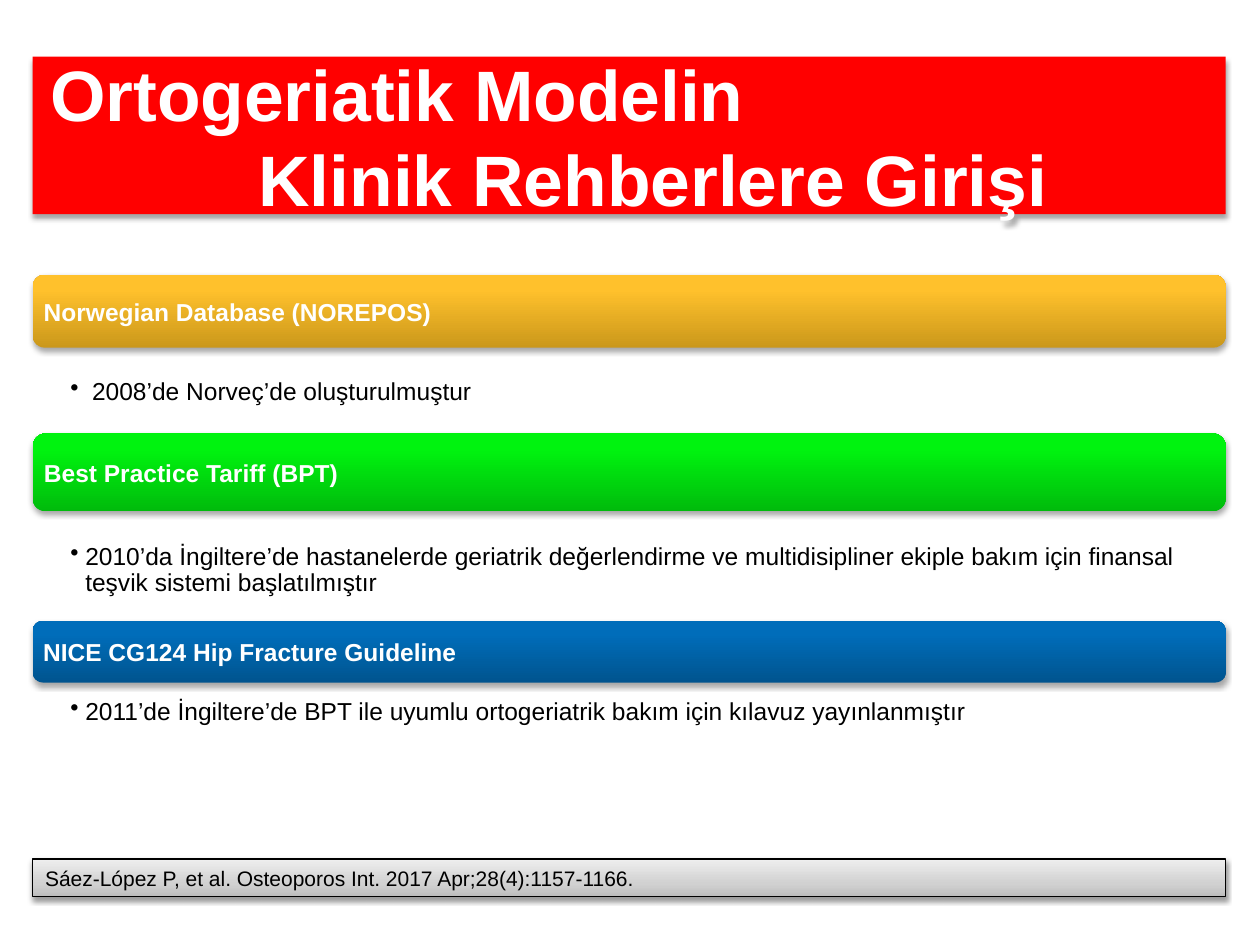
from lxml import etree
from pptx import Presentation
from pptx.dml.color import RGBColor
from pptx.enum.shapes import MSO_SHAPE
from pptx.enum.text import MSO_ANCHOR, MSO_AUTO_SIZE, PP_ALIGN
from pptx.oxml import parse_xml
from pptx.oxml.ns import nsdecls, qn
from pptx.util import Cm, Pt

RECTANGLE = MSO_SHAPE.RECTANGLE
ROUNDED = MSO_SHAPE.ROUNDED_RECTANGLE
TOP, MIDDLE = MSO_ANCHOR.TOP, MSO_ANCHOR.MIDDLE
LEFT = PP_ALIGN.LEFT
NO_AUTOFIT = MSO_AUTO_SIZE.NONE

MARGIN, WIDTH = Cm(0.66), Cm(24.05)
TITLE_LINES = [("Ortogeriatik Modelin", 0.1), ("Klinik Rehberlere Girişi", 4.3)]
SECTIONS = [
    ("Norwegian Database (NOREPOS)", 5.54, 1.47, ("CB981B", "FFC12C", "FFC22E"),
     " 2008’de Norveç’de oluşturulmuştur", 7.59),
    ("Best Practice Tariff (BPT)", 8.74, 1.57, ("00BB0C", "00F30F", "00F40F"),
     "2010’da İngiltere’de hastanelerde geriatrik değerlendirme ve multidisipliner "
     "ekiple bakım için finansal teşvik sistemi başlatılmıştır", 10.92),
    ("NICE CG124 Hip Fracture Guideline", 12.52, 1.24, ("00548F", "006DBA", "006DBB"),
     "2011’de İngiltere’de BPT ile uyumlu ortogeriatrik bakım için kılavuz yayınlanmıştır",
     14.05),
]
CITATION = "Sáez-López P, et al. Osteoporos Int. 2017 Apr;28(4):1157-1166."


def rgb(color):
    """Return the colour for a hex string."""
    return RGBColor.from_string(color)


def format_text(paragraph, size, color, bold=False):
    """Set alignment and font of a paragraph."""
    paragraph.alignment = LEFT
    for run in paragraph.runs:
        run.font.name = "Arial"
        run.font.size = Pt(size)
        run.font.bold = bold
        run.font.color.rgb = rgb(color)


def set_frame(frame, anchor, left, top, right, bottom):
    """Set wrapping, anchor and insets in centimetres."""
    frame.word_wrap = True
    frame.auto_size = NO_AUTOFIT
    frame.vertical_anchor = anchor
    frame.margin_left, frame.margin_top = Cm(left), Cm(top)
    frame.margin_right, frame.margin_bottom = Cm(right), Cm(bottom)


def add_shadow(shape, opacity, distance):
    """Give a shape a soft shadow straight below it."""
    shape.shadow.inherit = False
    effects = shape._element.spPr.find(qn("a:effectLst"))
    effects.append(parse_xml(
        f'<a:outerShdw {nsdecls("a")} blurRad="{Pt(3.1)}" dist="{Pt(distance)}" '
        f'dir="5400000" rotWithShape="0"><a:srgbClr val="000000">'
        f'<a:alpha val="{opacity * 1000}"/></a:srgbClr></a:outerShdw>'))


def fill_gradient(shape, colors, middle):
    """Fill a shape with three colours from bottom to top."""
    shape.fill.gradient()
    shape.fill.gradient_angle = 90
    stops = shape._element.spPr.find(qn("a:gradFill")).find(qn("a:gsLst"))
    for stop in list(stops):
        stops.remove(stop)
    for position, color in zip((0, middle, 100), colors):
        stop = etree.SubElement(stops, qn("a:gs"), pos=str(position * 1000))
        etree.SubElement(stop, qn("a:srgbClr"), val=color)


def add_bar(slide, kind, top, height, colors, middle, text):
    """Add a full-width gradient bar with its text."""
    bar = slide.shapes.add_shape(kind, MARGIN, Cm(top), WIDTH, Cm(height))
    fill_gradient(bar, colors, middle)
    bar.line.fill.background()
    bar.text_frame.text = text
    return bar


def add_heading(slide, text, top, height, colors):
    """Add a rounded section heading."""
    heading = add_bar(slide, ROUNDED, top, height, colors, 80, text)
    add_shadow(heading, 35, 1.8)
    set_frame(heading.text_frame, MIDDLE, 0.15, 0.15, 0.15, 0.15)
    format_text(heading.text_frame.paragraphs[0], 14, "FFFFFF", True)


def add_bullet(slide, text, top):
    """Add the bulleted statement below a heading."""
    statement = slide.shapes.add_textbox(MARGIN, Cm(top), WIDTH, Cm(2.06))
    set_frame(statement.text_frame, TOP, 0.76, 0.05, 0.28, 0.05)
    paragraph = statement.text_frame.paragraphs[0]
    paragraph.text = text
    properties = paragraph._p.get_or_add_pPr()
    properties.set("marL", str(Cm(0.3)))
    properties.set("indent", str(-Cm(0.3)))
    etree.SubElement(properties, qn("a:buChar"), char="•")
    paragraph.line_spacing = 0.9
    format_text(paragraph, 14, "000000")


def add_title(slide):
    """Place the title lines in the red banner."""
    title = slide.shapes.title
    title.left, title.top, title.width, title.height = MARGIN, Cm(1.14), WIDTH, Cm(3.18)
    title.fill.solid()
    title.fill.fore_color.rgb = rgb("FF0000")
    add_shadow(title, 35, 1.8)
    set_frame(title.text_frame, MIDDLE, 0.25, 0.13, 0.25, 0.13)
    title.text_frame.text = "\n".join(text for text, _ in TITLE_LINES)
    for paragraph, (_, indent) in zip(title.text_frame.paragraphs, TITLE_LINES):
        paragraph._p.get_or_add_pPr().set("marL", str(Cm(indent)))
        paragraph.space_before = Pt(0)
        format_text(paragraph, 40.8, "FFFFFF", True)


def add_citation(slide):
    """Add the outlined source bar at the foot."""
    citation = add_bar(slide, RECTANGLE, 17.32, 0.76,
                       ("BDBDBD", "D1D1D1", "EEEEEE"), 35, CITATION)
    citation.line.color.rgb = rgb("000000")
    citation.line.width = Pt(0.75)
    add_shadow(citation, 38, 1.6)
    set_frame(citation.text_frame, MIDDLE, 0.25, 0.13, 0.25, 0.13)
    format_text(citation.text_frame.paragraphs[0], 12, "000000")


def main():
    """Build and save the slide."""
    presentation = Presentation()
    presentation.slide_width, presentation.slide_height = Cm(25.4), Cm(19.05)
    slide = presentation.slides.add_slide(presentation.slide_layouts[5])
    add_title(slide)
    for heading, top, height, colors, statement, statement_top in SECTIONS:
        add_heading(slide, heading, top, height, colors)
        add_bullet(slide, statement, statement_top)
    add_citation(slide)
    presentation.save("out.pptx")


if __name__ == "__main__":
    main()
